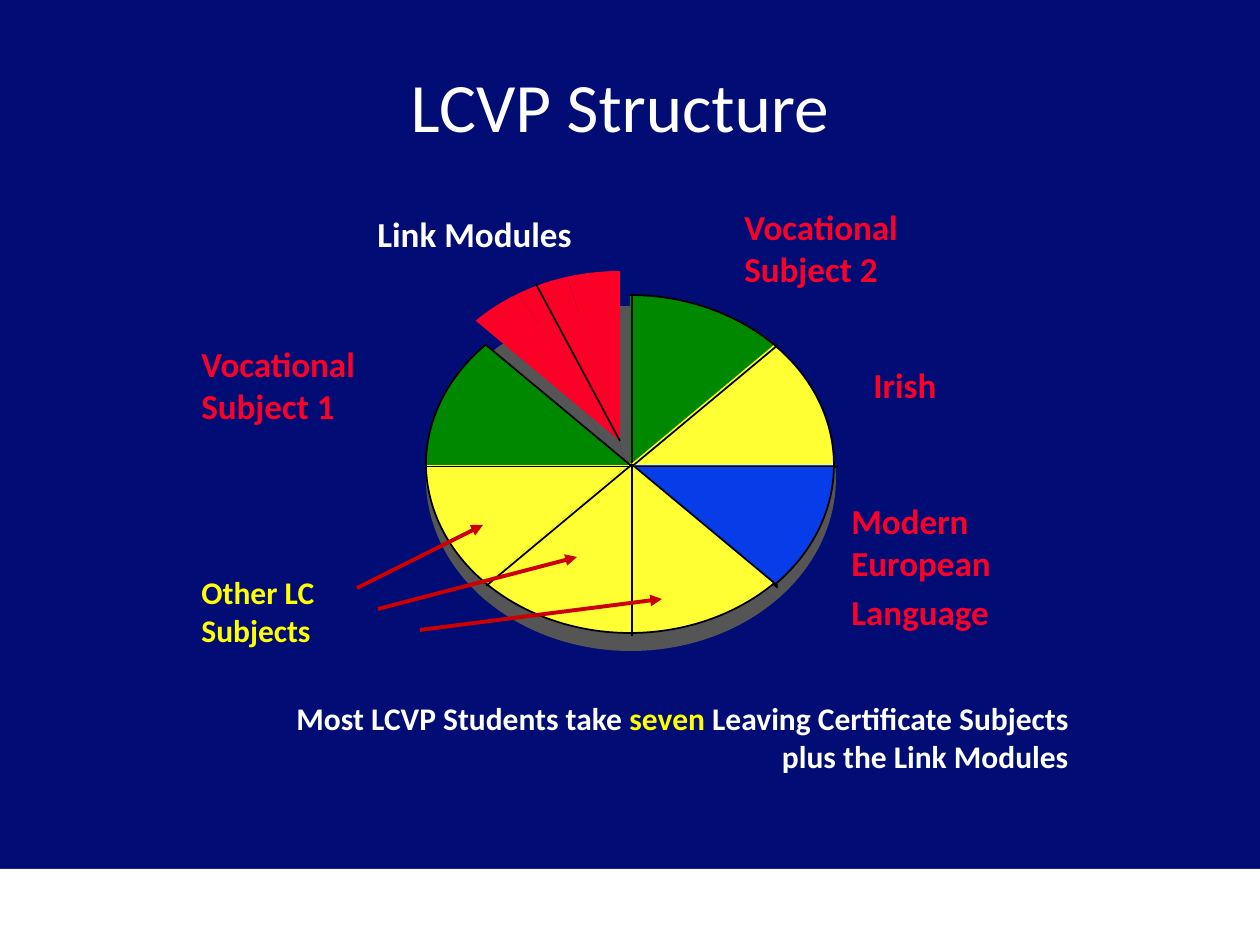
from copy import deepcopy
from math import cos, radians, sin, tan

from lxml import etree
from pptx import Presentation
from pptx.dml.color import RGBColor
from pptx.enum.shapes import MSO_CONNECTOR, MSO_SHAPE
from pptx.enum.text import MSO_ANCHOR, PP_ALIGN
from pptx.oxml.ns import qn
from pptx.util import Emu, Pt

STRAIGHT = MSO_CONNECTOR.STRAIGHT
RECTANGLE = MSO_SHAPE.RECTANGLE
MIDDLE = MSO_ANCHOR.MIDDLE
LEFT, CENTER, RIGHT = PP_ALIGN.LEFT, PP_ALIGN.CENTER, PP_ALIGN.RIGHT

NAVY = RGBColor(0x01, 0x0C, 0x75)
WHITE = RGBColor(0xFF, 0xFF, 0xFF)
BLACK = RGBColor(0x00, 0x00, 0x00)
SPOKE_BLACK = RGBColor(0x08, 0x08, 0x00)
GRAY = RGBColor(0x55, 0x55, 0x55)
GREEN = RGBColor(0x00, 0x88, 0x00)
YELLOW = RGBColor(0xFF, 0xFF, 0x33)
BRIGHT_YELLOW = RGBColor(0xFF, 0xFF, 0x00)
BLUE = RGBColor(0x06, 0x3D, 0xE8)
RED = RGBColor(0xFC, 0x01, 0x28)
DARK_RED = RGBColor(0xCC, 0x00, 0x00)

FONT = "Calibri"
SCALE = 914400 // 126
SUBJECTS = [(GREEN, 0, (0, 45)), (YELLOW, 0, ()), (BLUE, 0, (90, 135)),
            (YELLOW, -2, (135,)), (YELLOW, -2, (180,)),
            (YELLOW, -2, (225, 270)), (GREEN, 0, (270, 315))]
LINK_ANGLES = [315, 338 - 8, 345, 360]


def px(value):
    """Turn px into EMU."""
    return Emu(round(value * SCALE))


def add_span(para, text, size, color, bold=True):
    """Append one formatted run to a paragraph."""
    span = para.add_run()
    span.text = text
    span.font.name = FONT
    span.font.size = Pt(size)
    span.font.bold = bold
    span.font.color.rgb = color


def add_label(page, box, lines, size, align=LEFT, gap=0):
    """Place a text box whose lines are lists of (text, color) spans."""
    frame = page.shapes.add_textbox(*map(px, box)).text_frame
    frame.word_wrap = True
    for index, spans in enumerate(lines):
        para = frame.add_paragraph() if index else frame.paragraphs[0]
        para.alignment = align
        if index and gap:
            para.space_before = Pt(gap)
        for text, color in spans:
            add_span(para, text, size, color)


def add_line(page, start, end, color, width, arrow=False):
    """Draw a straight line, with an arrowhead at its end if wanted."""
    line = page.shapes.add_connector(STRAIGHT, *map(px, start + end))
    line.line.color.rgb = color
    line.line.width = Pt(width)
    properties = line._element.spPr
    if arrow:
        outline = properties.find(qn("a:ln"))
        etree.SubElement(outline, qn("a:tailEnd"), type="triangle")
    etree.SubElement(properties, qn("a:effectLst"))


def add_outline(page, points, close):
    """Build an unshadowed freeform through points given in px."""
    corners = [(px(x), px(y)) for x, y in points]
    builder = page.shapes.build_freeform(*corners[0], scale=1.0)
    builder.add_line_segments(corners[1:], close=close)
    shape = builder.convert_to_shape()
    shape.shadow.inherit = False
    shape.line.color.rgb = BLACK
    shape.line.width = Pt(1)
    return shape


def center(box):
    """Find the middle of a box."""
    left, top, width, height = box
    return left + width / 2, top + height / 2


def rim_point(box, angle, pull=0):
    """Find a point on the box's ellipse, pulled along the tangent."""
    middle_x, middle_y = center(box)
    across, up = sin(radians(angle)), cos(radians(angle))
    return (middle_x + box[2] / 2 * (across + pull * up),
            middle_y - box[3] / 2 * (up - pull * across))


def add_slice(page, box, start, end, color, outlined=False):
    """Draw a pie slice in the box's ellipse, outlined along its rim only."""
    points = [rim_point(box, start), rim_point(box, end), center(box)]
    shape = add_outline(page, points, True)
    shape.fill.solid()
    shape.fill.fore_color.rgb = color
    sector = shape._element.find(".//" + qn("a:path"))
    pull = 4 / 3 * tan(radians(end - start) / 4)
    curve = etree.Element(qn("a:cubicBezTo"))
    for x, y in (rim_point(box, start, pull), rim_point(box, end, -pull),
                 points[1]):
        etree.SubElement(curve, qn("a:pt"), x=str(px(x) - shape.left),
                         y=str(px(y) - shape.top))
    sector.replace(sector[1], curve)
    if not outlined:
        shape.line.fill.background()
        return
    rim = deepcopy(sector)
    for edge in list(rim)[-2:]:
        rim.remove(edge)
    rim.set("fill", "none")
    sector.set("stroke", "0")
    sector.addprevious(rim)


def add_pie(page, box):
    """Draw the pie with its shadow, spokes and pulled-out link modules."""
    left, top, width, height = box
    shadow = (left, top + 11, width + 2, height + 5)
    links = (left - 10, top - 24, width, height)
    edges = list(range(0, 315, 45)) + LINK_ANGLES
    for start, end in zip(edges, edges[1:]):
        add_slice(page, shadow, start, end, GRAY)
    for index, (color, shift, angles) in enumerate(SUBJECTS):
        start, end = index * 45, index * 45 + 45
        add_slice(page, (left, top + shift, width, height), start, end,
                  color, True)
        spokes = (left, top + shift, width + 4, height + 3)
        for angle in angles:
            add_line(page, center(spokes), rim_point(spokes, angle), BLACK, 1)
        if not angles:
            corner = [rim_point(spokes, start), center(spokes),
                      rim_point(spokes, end)]
            add_outline(page, corner, False).fill.background()
    for start, end in zip(LINK_ANGLES, LINK_ANGLES[1:]):
        add_slice(page, links, start, end, RED)


def add_title(page, box):
    """Place the title, raised a little above the middle of its box."""
    title = page.shapes.title
    title.left, title.top, title.width, title.height = map(px, box)
    frame = title.text_frame
    frame.vertical_anchor = MIDDLE
    frame.margin_top, frame.margin_bottom = px(6), px(48)
    para = frame.paragraphs[0]
    para.alignment = CENTER
    add_span(para, "LCVP Structure", 39.6, WHITE, False)


def add_band(page, box):
    """Draw the white band at the foot of the page."""
    band = page.shapes.add_shape(RECTANGLE, *map(px, box))
    band.shadow.inherit = False
    band.fill.solid()
    band.fill.fore_color.rgb = WHITE
    band.line.fill.background()


def add_labels(page):
    """Place the subject labels, the arrows and the closing sentence."""
    add_label(page, (365, 206, 250, 54), [[("Link Modules", WHITE)]], 20)
    add_label(page, (839, 493, 253, 141),
              [[("Modern European", RED)], [("Language", RED)]], 20, gap=4)
    for number, box in ((1, (189, 336, 312, 72)), (2, (732, 199, 282, 72))):
        add_label(page, box, [[("Vocational", RED)],
                              [(f"Subject {number}", RED)]], 20)
    add_label(page, (861, 357, 136, 40), [[("Irish", RED)]], 20)
    add_label(page, (189, 567, 210, 88),
              [[("Other LC Subjects", BRIGHT_YELLOW)]], 18)
    for start, end in (((357, 588), (483, 525)),
                       ((378, 609), (577, 557)),
                       ((420, 630), (662, 599))):
        add_line(page, start, end, DARK_RED, 2.25, True)
    add_label(page, (231, 693, 850, 88),
              [[("Most LCVP Students take ", WHITE),
                ("seven ", BRIGHT_YELLOW),
                ("Leaving Certificate Subjects plus the Link Modules", WHITE)]],
              18, RIGHT)
    add_line(page, (536, 284), (620, 441), SPOKE_BLACK, 1)


def main():
    """Build and save the deck."""
    deck = Presentation()
    deck.slide_width, deck.slide_height = px(1260), px(945)
    page = deck.slides.add_slide(deck.slide_layouts[5])
    page.background.fill.solid()
    page.background.fill.fore_color.rgb = NAVY
    add_band(page, (0, 869, 1260, 76))
    add_title(page, (53, 21, 1134, 210))
    add_pie(page, (426, 295, 408, 340))
    add_labels(page)
    deck.save("out.pptx")


if __name__ == "__main__":
    main()
